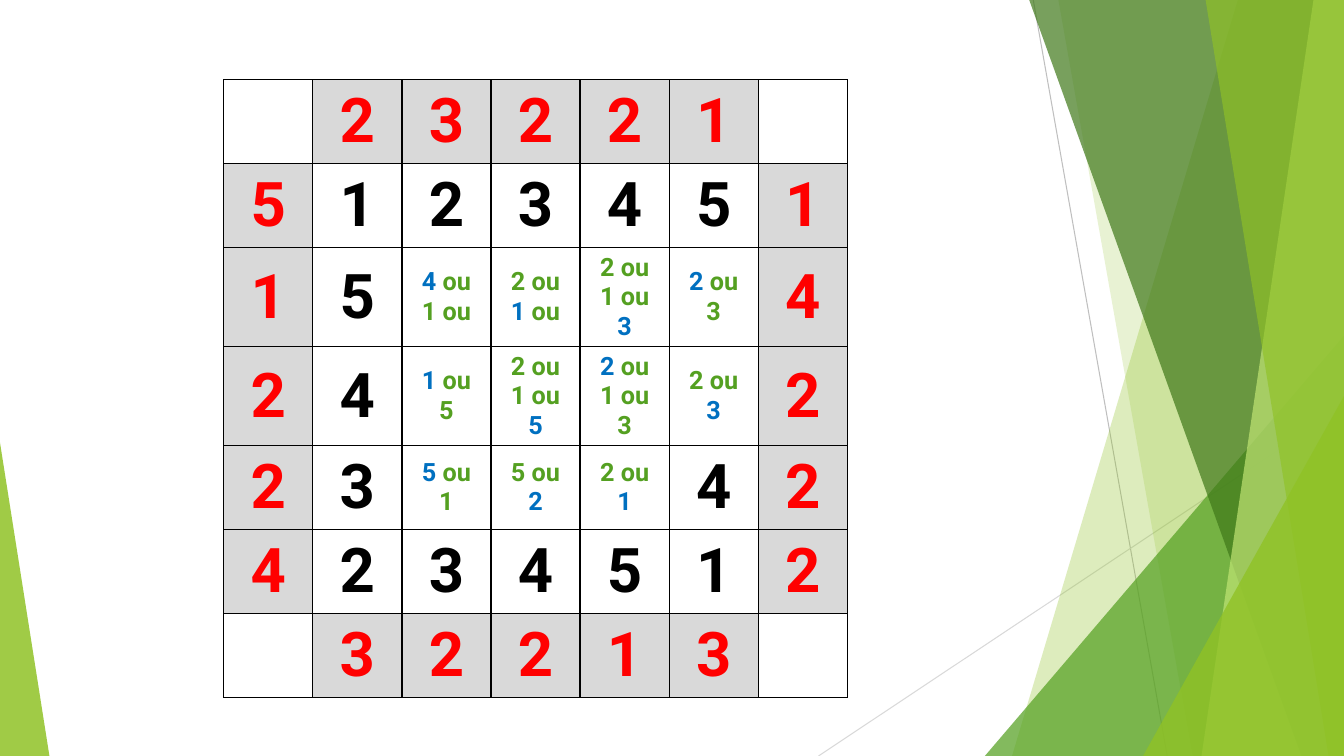
import pptx
import pptx.util
import pptx.dml.color
import pptx.enum.shapes
import pptx.enum.text
import pptx.oxml
import pptx.oxml.ns

RGB = pptx.dml.color.RGBColor
LIME = RGB(0x90, 0xC2, 0x26)
PALE = RGB(0xC0, 0xE4, 0x74)
GREEN = RGB(0x54, 0xA0, 0x21)
DARK = RGB(0x3F, 0x78, 0x19)
BLUE = RGB(0x00, 0x70, 0xC0)
RED = RGB(0xFF, 0x00, 0x00)
BLACK = RGB(0x00, 0x00, 0x00)
WHITE = RGB(0xFF, 0xFF, 0xFF)
GREY = RGB(0xD9, 0xD9, 0xD9)
MID = RGB(0xBF, 0xBF, 0xBF)

GRID = [
    "|2|3|2|2|1|",
    "5|1|2|3|4|5|1",
    "1|5|*4* ou 1 ou|2 ou *1* ou|2 ou 1 ou *3*|*2* ou 3|4",
    "2|4|*1* ou 5|2 ou 1 ou *5*|*2* ou 1 ou 3|2 ou *3*|2",
    "2|3|*5* ou 1|5 ou *2*|2 ou *1*|4|2",
    "4|2|3|4|5|1|2",
    "|3|2|2|1|3|",
]
LEFT, TOP, COL = 16.65, 10.53, 6.63
ROWS = [11.11, 11.11, 13.1, 13.1, 11.11, 11.11, 11.11]

RAYS = [
    ((76.88, 0), (86.85, 100), MID),
    ((100, 53.73), (60.9, 100), GREY),
]
DECOR = [
    ("strip", 92.1, 75.3, LIME, 30),
    ("strip", 78.75, 88.73, LIME, 20),
    ("wedge", (73.28, 44.4, 26.72), 1, GREEN, 72),
    ("strip", 76.58, 96.83, DARK, 70),
    ("strip", 97.73, 89.4, PALE, 70),
    ("strip", 89.7, 98.85, LIME, 65),
    ("wedge", (85.05, 52.4, 14.95), 1, LIME, 80),
    ("wedge", (0, 58.53, 3.68), 0, LIME, 85),
]

deck = pptx.Presentation()
deck.slide_width = pptx.util.Inches(13.33)
deck.slide_height = pptx.util.Inches(7.5)
slide = deck.slides.add_slide(deck.slide_layouts[6])
shapes = slide.shapes


def across(share):
    return round(deck.slide_width * share / 100)


def down(share):
    return round(deck.slide_height * share / 100)


def point(spot):
    return across(spot[0]), down(spot[1])


def assign(item, values):
    for name, value in values.items():
        setattr(item, name, value)


def add_ray(start, end, color):
    ray = shapes.add_connector(
        pptx.enum.shapes.MSO_CONNECTOR.STRAIGHT, *point(start), *point(end))
    ray.line.width = pptx.util.Pt(0.75)
    ray.line.color.rgb = color
    pptx.oxml.ns.qn("a:effectLst")
    ray._element.spPr.append(pptx.oxml.parse_xml(
        f'<a:effectLst {pptx.oxml.ns.nsdecls("a")}/>'))


def strip(top, base):
    form = shapes.build_freeform(*point((top, 0)))
    form.add_line_segments([point(p) for p in [(100, 0), (100, 100), (base, 100)]])
    return form.convert_to_shape()


def wedge(place, apex):
    left, top, width = place
    shape = shapes.add_shape(
        pptx.enum.shapes.MSO_SHAPE.ISOSCELES_TRIANGLE,
        across(left), down(top), across(width), down(100 - top))
    shape.adjustments[0] = apex
    return shape


def paint(shape, color, alpha):
    shape.shadow.inherit = False
    shape.line.fill.background()
    shape.fill.solid()
    shape.fill.fore_color.rgb = color
    tint = shape._element.spPr.find(".//" + pptx.oxml.ns.qn("a:srgbClr"))
    tint.append(pptx.oxml.parse_xml(
        f'<a:alpha {pptx.oxml.ns.nsdecls("a")} val="{alpha * 1000}"/>'))


def border(cell):
    props = cell._tc.get_or_add_tcPr()
    for spot, side in enumerate("LRTB"):
        props.insert(spot, pptx.oxml.parse_xml(
            f'<a:ln{side} {pptx.oxml.ns.nsdecls("a")} w="12700"><a:solidFill>'
            f'<a:srgbClr val="{BLACK}"/></a:solidFill></a:ln{side}>'))


def write(cell, text, edge):
    cell.vertical_anchor = pptx.enum.text.MSO_ANCHOR.MIDDLE
    cell.fill.solid()
    cell.fill.fore_color.rgb = GREY if edge and text else WHITE
    border(cell)
    line = cell.text_frame.paragraphs[0]
    line.alignment = pptx.enum.text.PP_ALIGN.CENTER
    large = len(text) == 1
    hues = [RED if edge else BLACK] if large else [GREEN, BLUE]
    for spot, part in enumerate(text.split("*")):
        if part:
            run = line.add_run()
            run.text = part
            assign(run.font, {"name": "Roboto", "bold": True,
                              "size": pptx.util.Pt(44 if large else 18)})
            run.font.color.rgb = hues[spot % 2]


def add_grid():
    count = len(GRID)
    table = shapes.add_table(
        count, count, across(LEFT), down(TOP),
        across(COL * count), down(sum(ROWS))).table
    assign(table, {"first_row": False, "horz_banding": False})
    for col in table.columns:
        col.width = across(COL)
    for r, text in enumerate(GRID):
        table.rows[r].height = down(ROWS[r])
        for c, entry in enumerate(text.split("|")):
            edge = r in (0, count - 1) or c in (0, count - 1)
            write(table.cell(r, c), entry, edge)


def main():
    for ray in RAYS:
        add_ray(*ray)
    makers = {"strip": strip, "wedge": wedge}
    for kind, first, second, color, alpha in DECOR:
        paint(makers[kind](first, second), color, alpha)
    add_grid()
    deck.save("out.pptx")


if __name__ == "__main__":
    main()
